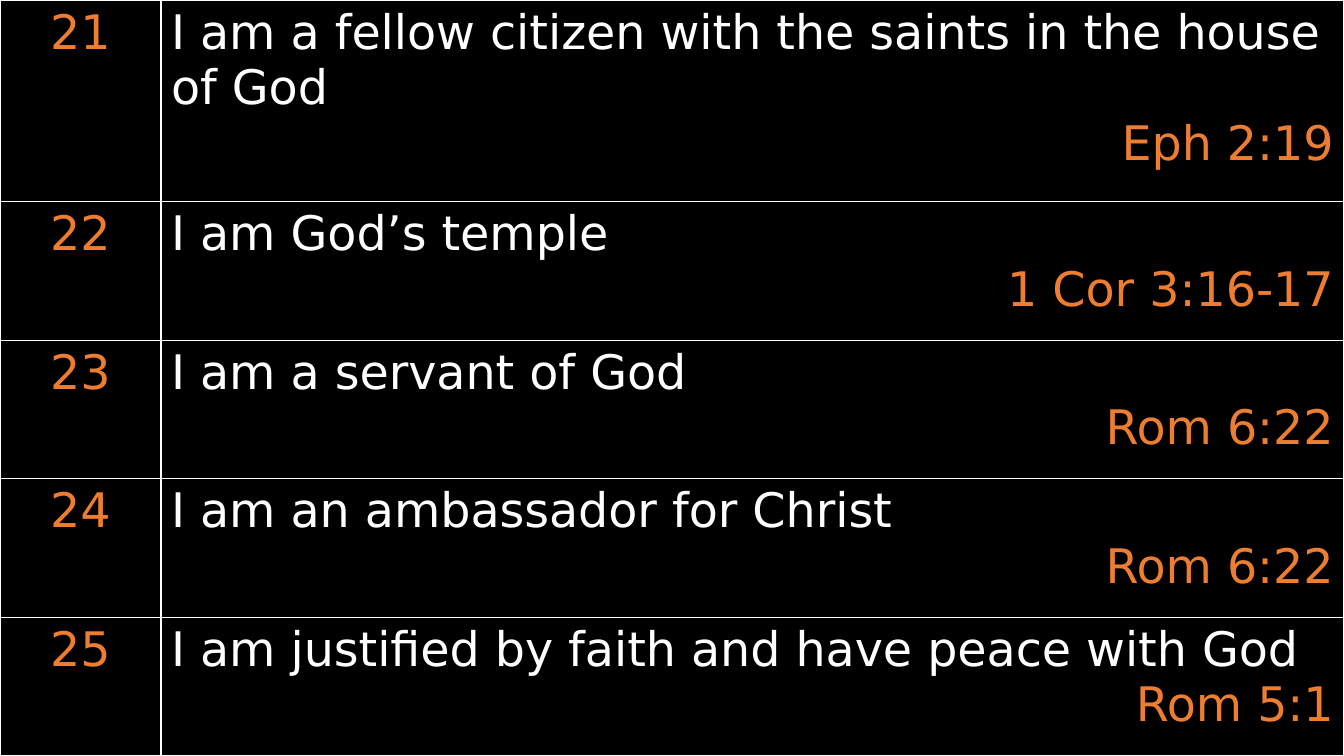
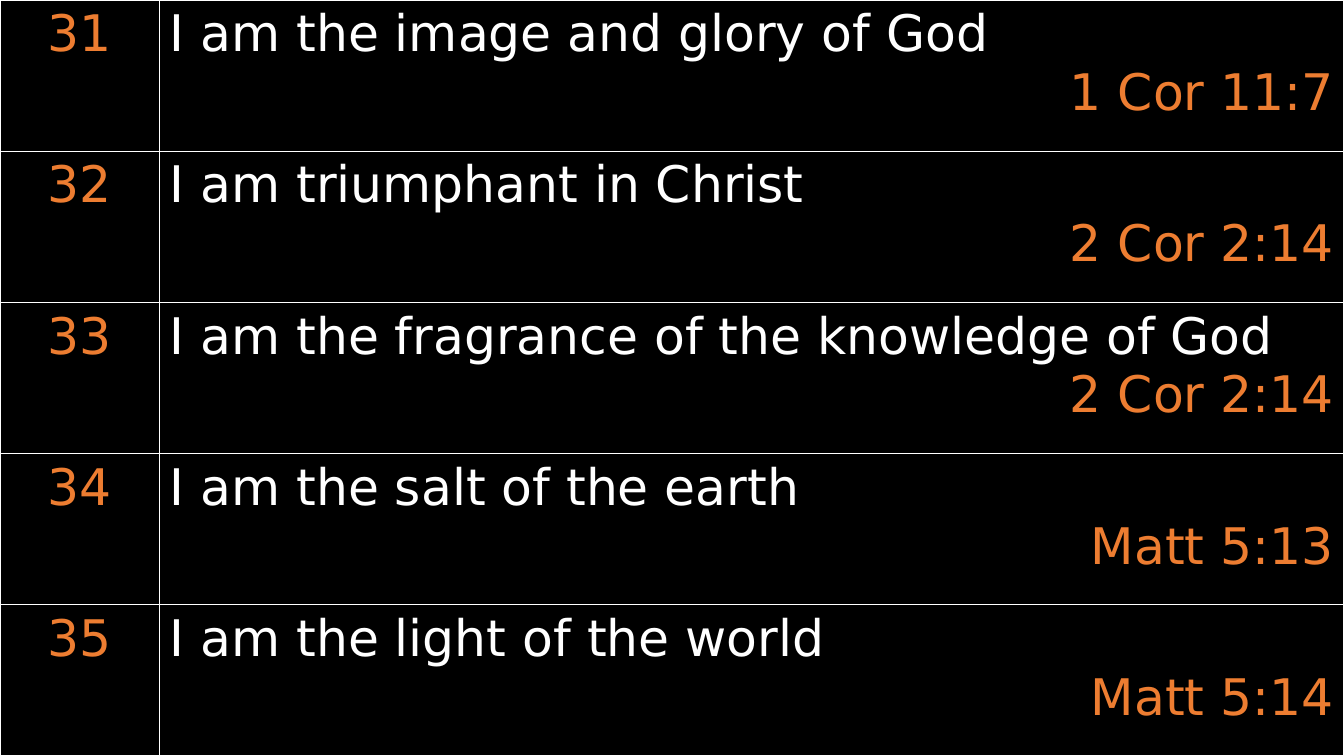
import pptx
import pptx.dml.color
import pptx.enum.text
import pptx.oxml
import pptx.oxml.ns
import pptx.util
from pptx.util import Pt

ALIGN = pptx.enum.text.PP_ALIGN
WIDTH, HEIGHT = 960, 540

SLIDES = [
    dict(size=34, number_width=115, heights=[144, 99, 99, 99, 99], rows=[
        ("21", "I am a fellow citizen with the saints in the house of God", "Eph 2:19"),
        ("22", "I am God’s temple", "1 Cor 3:16-17"),
        ("23", "I am a servant of God", "Rom 6:22"),
        ("24", "I am an ambassador for Christ", "Rom 6:22"),
        ("25", "I am justified by faith and have peace with God", "Rom 5:1"),
    ]),
    dict(size=36, number_width=114, heights=[108] * 5, rows=[
        ("31", "I am the image and glory of God", "1 Cor 11:7"),
        ("32", "I am triumphant in Christ", "2 Cor 2:14"),
        ("33", "I am the fragrance of the knowledge of God", "2 Cor 2:14"),
        ("34", "I am the salt of the earth", "Matt 5:13"),
        ("35", "I am the light of the world", "Matt 5:14"),
    ]),
]


def rgb(value):
    return pptx.dml.color.RGBColor.from_string(value)


class Deck:
    FONT = "DejaVu Sans"
    BLACK, WHITE, ORANGE = "000000", "FFFFFF", "ED7D31"
    BORDER = 1

    def __init__(self):
        self.prs = pptx.Presentation()
        self.prs.slide_width, self.prs.slide_height = Pt(WIDTH), Pt(HEIGHT)
        self.fill(self.prs.slide_master.background.fill)
        self.s = None

    def fill(self, fill):
        fill.solid()
        fill.fore_color.rgb = rgb(self.BLACK)

    def add_slide(self):
        self.s = self.prs.slides.add_slide(self.prs.slide_layouts[6])

    def borders(self, cell):
        """Draw all four edges; must run before the cell is filled."""
        tc_pr = cell._tc.get_or_add_tcPr()
        for side in "LRTB":
            tc_pr.append(pptx.oxml.parse_xml(
                f'<a:ln{side} {pptx.oxml.ns.nsdecls("a")} w="{Pt(self.BORDER)}">'
                f'<a:solidFill><a:srgbClr val="{self.WHITE}"/></a:solidFill>'
                f'</a:ln{side}>'))

    def cell(self, cell, size, *lines):
        """Style a cell and write (text, colour, alignment) paragraphs."""
        self.borders(cell)
        self.fill(cell.fill)
        tf = cell.text_frame
        for i, (text, color, align) in enumerate(lines):
            p = tf.add_paragraph() if i else tf.paragraphs[0]
            p.text = text
            p.alignment = align
            p.font.name, p.font.size = self.FONT, Pt(size)
            p.font.color.rgb = rgb(color)

    def verse_table(self, size, number_width, heights, rows):
        """Fill the slide with numbered statements and their references."""
        tbl = self.s.shapes.add_table(
            len(rows), 2, Pt(0), Pt(0), Pt(WIDTH), Pt(HEIGHT)).table
        tbl.first_row = tbl.horz_banding = False
        for col, width in zip(tbl.columns, (number_width, WIDTH - number_width)):
            col.width = Pt(width)
        for row, height, (number, statement, verse) in zip(tbl.rows, heights, rows):
            row.height = Pt(height)
            left, right = row.cells
            self.cell(left, size, (number, self.ORANGE, ALIGN.CENTER))
            self.cell(right, size, (statement, self.WHITE, ALIGN.LEFT),
                      (verse, self.ORANGE, ALIGN.RIGHT))


def main():
    deck = Deck()
    for content in SLIDES:
        deck.add_slide()
        deck.verse_table(**content)
    deck.prs.save("out.pptx")


if __name__ == "__main__":
    main()
